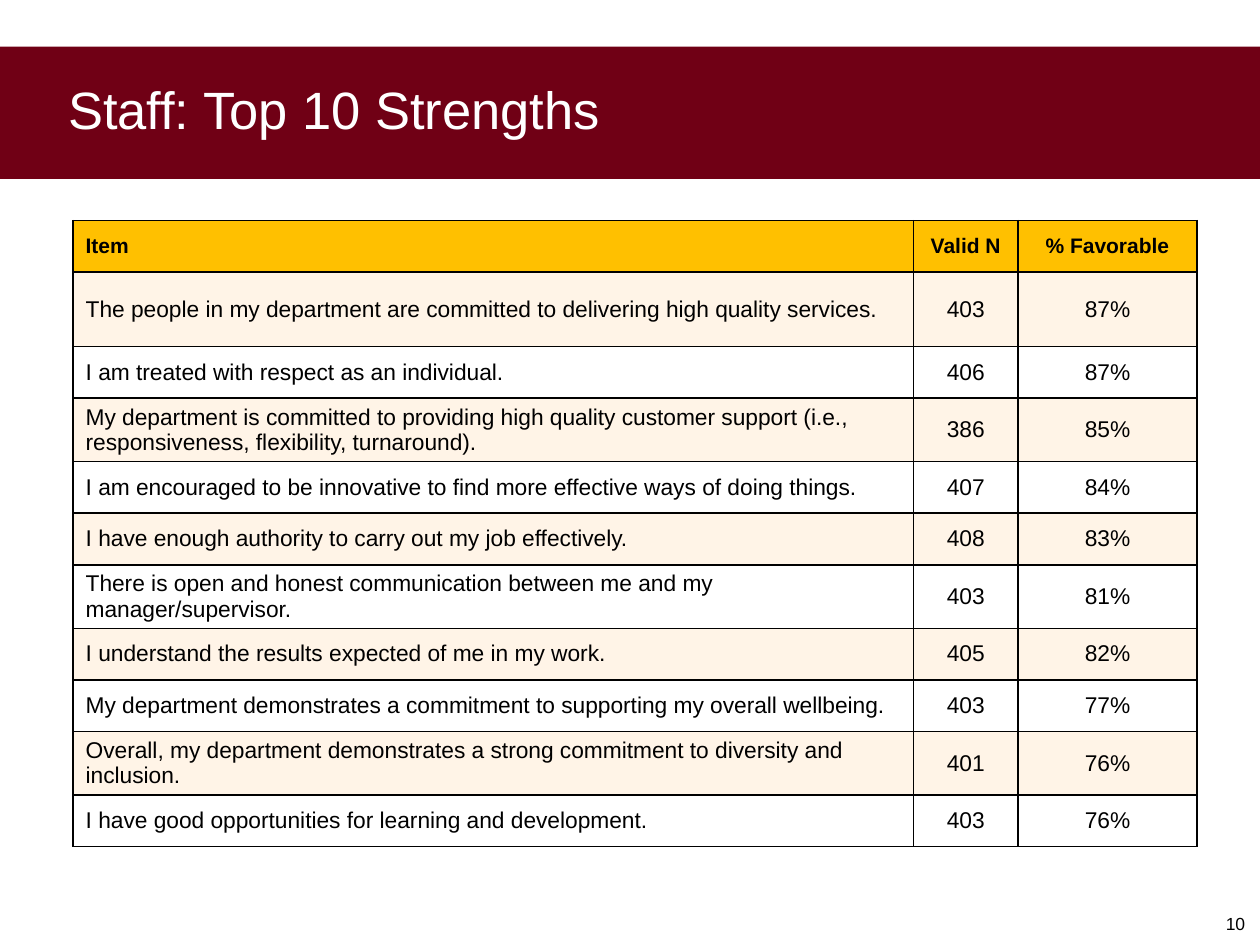
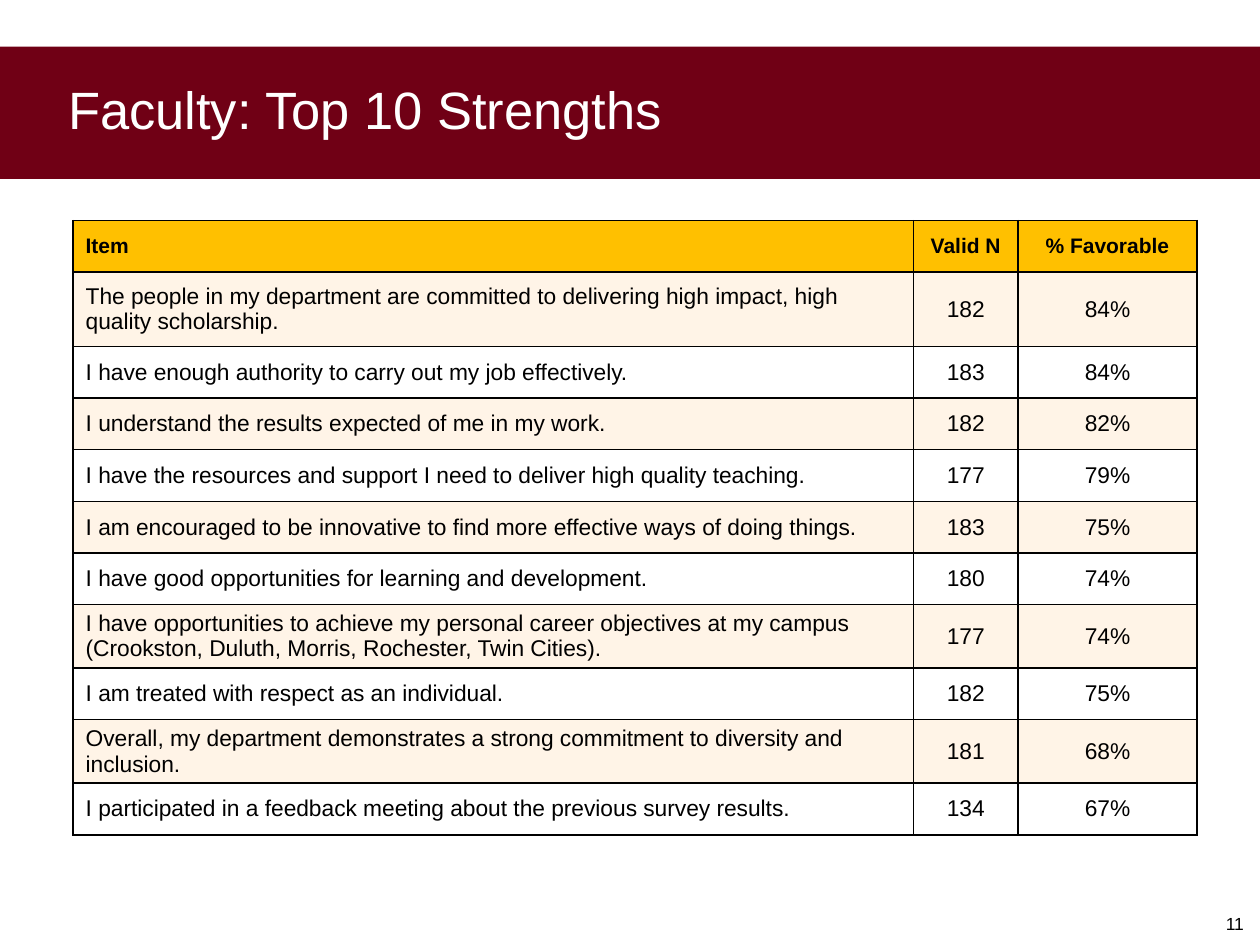
import dataclasses

import lxml.etree
import pptx
import pptx.dml.color
import pptx.enum.shapes
import pptx.enum.text
import pptx.oxml.ns
import pptx.util

Inches = pptx.util.Inches
Pt = pptx.util.Pt
Align = pptx.enum.text.PP_ALIGN
Anchor = pptx.enum.text.MSO_ANCHOR
RGBColor = pptx.dml.color.RGBColor

MAROON = RGBColor(0x70, 0x00, 0x15)
GOLD = RGBColor(0xFF, 0xC0, 0x00)
CREAM = RGBColor(0xFF, 0xF4, 0xE7)
WHITE = RGBColor(0xFF, 0xFF, 0xFF)
BLACK = RGBColor(0x00, 0x00, 0x00)

FONT = "Arial"
HEADS = ("Item", "Valid N", "% Favorable")
WIDTHS = (6.67, 0.83, 1.42)
ROW = 0.41
TALL_ROW = 0.59
FIRST_PAGE = 10


@dataclasses.dataclass(frozen=True)
class Item:
    text: str
    count: int
    score: int


@dataclasses.dataclass(frozen=True)
class Group:
    name: str
    items: tuple[Item, ...]


GROUPS = (
    Group("Staff", (
        Item("The people in my department are committed to delivering high quality services.", 403, 87),
        Item("I am treated with respect as an individual.", 406, 87),
        Item("My department is committed to providing high quality customer support "
             "(i.e., responsiveness, flexibility, turnaround).", 386, 85),
        Item("I am encouraged to be innovative to find more effective ways of doing things.", 407, 84),
        Item("I have enough authority to carry out my job effectively.", 408, 83),
        Item("There is open and honest communication between me and my manager/supervisor.", 403, 81),
        Item("I understand the results expected of me in my work.", 405, 82),
        Item("My department demonstrates a commitment to supporting my overall wellbeing.", 403, 77),
        Item("Overall, my department demonstrates a strong commitment to diversity and inclusion.", 401, 76),
        Item("I have good opportunities for learning and development.", 403, 76),
    )),
    Group("Faculty", (
        Item("The people in my department are committed to delivering high impact, "
             "high quality scholarship.", 182, 84),
        Item("I have enough authority to carry out my job effectively.", 183, 84),
        Item("I understand the results expected of me in my work.", 182, 82),
        Item("I have the resources and support I need to deliver high quality teaching.", 177, 79),
        Item("I am encouraged to be innovative to find more effective ways of doing things.", 183, 75),
        Item("I have good opportunities for learning and development.", 180, 74),
        Item("I have opportunities to achieve my personal career objectives at my campus "
             "(Crookston, Duluth, Morris, Rochester, Twin Cities).", 177, 74),
        Item("I am treated with respect as an individual.", 182, 75),
        Item("Overall, my department demonstrates a strong commitment to diversity and inclusion.", 181, 68),
        Item("I participated in a feedback meeting about the previous survey results.", 134, 67),
    )),
)


def write(frame, text: str, size: int, color: RGBColor, align=Align.LEFT, bold: bool = False):
    frame.text = text
    par = frame.paragraphs[0]
    par.alignment = align
    par.font.name = FONT
    par.font.size = Pt(size)
    par.font.bold = bold
    par.font.color.rgb = color
    return par


def add_page(slide, page: int) -> None:
    box = slide.shapes.add_textbox(Inches(9.63), Inches(7.2), Inches(0.75), Inches(0.27))
    box.text_frame.word_wrap = True
    write(box.text_frame, str(page), 10, BLACK)


def add_title(slide, text: str) -> None:
    band = slide.shapes.add_shape(
        pptx.enum.shapes.MSO_SHAPE.RECTANGLE, 0, Inches(0.37), Inches(10), Inches(1.05))
    band.shadow.inherit = False
    band.fill.solid()
    band.fill.fore_color.rgb = MAROON
    band.line.fill.background()

    title = slide.shapes.title
    title._element.addprevious(band._element)
    title.left, title.top = Inches(0.44), Inches(0.61)
    title.width, title.height = Inches(8.31), Inches(0.56)
    frame = title.text_frame
    frame.auto_size = pptx.enum.text.MSO_AUTO_SIZE.NONE
    frame.vertical_anchor = Anchor.BOTTOM
    write(frame, text, 30, WHITE).line_spacing = 0.9


def add_edges(cell) -> None:
    props = cell._tc.get_or_add_tcPr()
    qn = pptx.oxml.ns.qn
    for side in ("a:lnL", "a:lnR", "a:lnT", "a:lnB"):
        line = lxml.etree.SubElement(props, qn(side), w=str(Pt(1)))
        fill = lxml.etree.SubElement(line, qn("a:solidFill"))
        lxml.etree.SubElement(fill, qn("a:srgbClr"), val=str(BLACK))


def add_grid(slide, items: tuple[Item, ...]) -> None:
    rows = [HEADS] + [(item.text, str(item.count), f"{item.score}%") for item in items]
    heights = [TALL_ROW if r == 1 else ROW for r in range(len(rows))]
    table = slide.shapes.add_table(
        len(rows), len(HEADS), Inches(0.58), Inches(1.75),
        Inches(sum(WIDTHS)), Inches(sum(heights))).table
    for col, width in zip(table.columns, WIDTHS):
        col.width = Inches(width)
    for r, texts in enumerate(rows):
        table.rows[r].height = Inches(heights[r])
        head = r == 0
        shade = GOLD if head else CREAM if r % 2 else WHITE
        for c, text in enumerate(texts):
            cell = table.cell(r, c)
            cell.vertical_anchor = Anchor.MIDDLE
            add_edges(cell)
            cell.fill.solid()
            cell.fill.fore_color.rgb = shade
            write(cell.text_frame, text, 12 if head else 13, BLACK,
                  Align.CENTER if c else Align.LEFT, head)


def main() -> None:
    deck = pptx.Presentation()
    deck.slide_width, deck.slide_height = Inches(10), Inches(7.5)
    for page, group in enumerate(GROUPS, FIRST_PAGE):
        slide = deck.slides.add_slide(deck.slide_layouts[5])
        add_title(slide, f"{group.name}: Top 10 Strengths")
        add_grid(slide, group.items)
        add_page(slide, page)
    deck.save("out.pptx")


if __name__ == "__main__":
    main()
